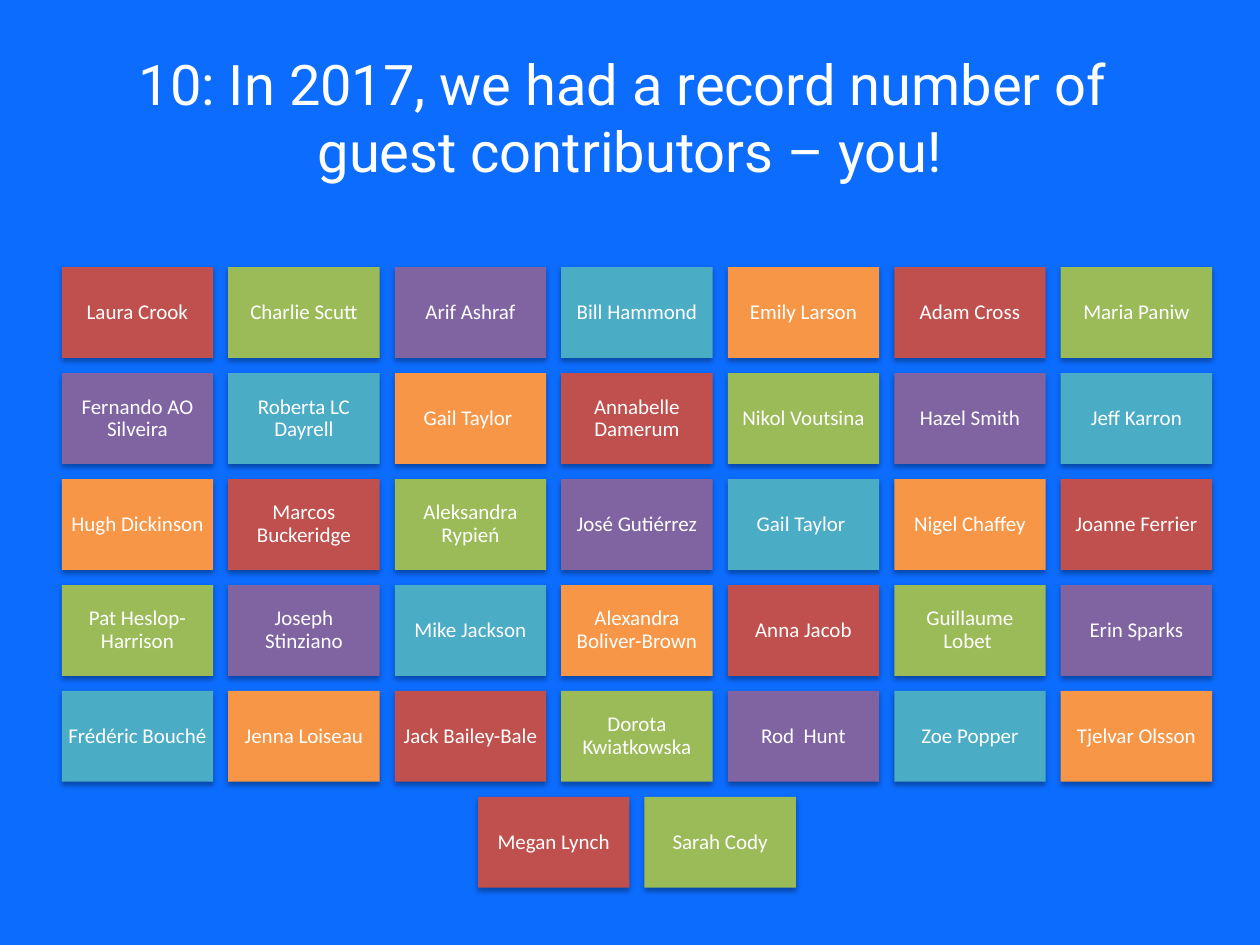
from lxml import etree
from pptx import Presentation
from pptx import util as u
from pptx.dml.color import RGBColor
from pptx.enum import shapes, text
from pptx.oxml import ns

ACCENTS = ["C0504D", "9BBB59", "8064A2", "4BACC6", "F79646"]
CONTRIBUTORS = [
    ["Laura Crook", "Charlie Scutt", "Arif Ashraf", "Bill Hammond",
     "Emily Larson", "Adam Cross", "Maria Paniw"],
    ["Fernando AO Silveira", "Roberta LC Dayrell", "Gail Taylor ", "Annabelle Damerum",
     "Nikol Voutsina", "Hazel Smith", "Jeff Karron"],
    ["Hugh Dickinson", "Marcos Buckeridge", "Aleksandra Rypień", "José Gutiérrez",
     "Gail Taylor ", "Nigel Chaffey", "Joanne Ferrier"],
    ["Pat Heslop-Harrison", "Joseph Stinziano", "Mike Jackson", "Alexandra Boliver-Brown",
     "Anna Jacob", "Guillaume Lobet ", "Erin Sparks"],
    ["Frédéric Bouché", "Jenna Loiseau", "Jack Bailey-Bale", "Dorota Kwiatkowska",
     "Rod  Hunt", "Zoe Popper", "Tjelvar Olsson"],
    ["Megan Lynch", "Sarah Cody"],
]


def paint(color_format, hex_color):
    color_format.rgb = RGBColor.from_string(hex_color)


def write(paragraph, words, font_name, size):
    paragraph.alignment = text.PP_ALIGN.CENTER
    run = paragraph.add_run()
    run.text = words
    run.font.name = font_name
    run.font.size = u.Pt(size)
    paint(run.font.color, "FFFFFF")


deck = Presentation()
deck.slide_width, deck.slide_height = u.Inches(10), u.Inches(7.5)
slide = deck.slides.add_slide(deck.slide_layouts[5])
slide.background.fill.solid()
paint(slide.background.fill.fore_color, "0C6CFE")

headline = slide.shapes.title
headline.left, headline.top = int(deck.slide_width * 0.05), int(deck.slide_height * 0.04)
headline.width, headline.height = int(deck.slide_width * 0.9), int(deck.slide_height / 6)
headline.text_frame.vertical_anchor = text.MSO_ANCHOR.MIDDLE
headline.text_frame.auto_size = text.MSO_AUTO_SIZE.NONE
headline_lines = headline.text_frame.paragraphs[0]
write(headline_lines, "10: In 2017, we had a record number of ", "Roboto", 32)
headline_lines.add_line_break()
write(headline_lines, "guest contributors – you!", "Roboto", 32)

columns = len(CONTRIBUTORS[0])
grid_left, grid_top, grid_width = u.Inches(0.49), u.Inches(2.12), u.Inches(9.13)
card_width = grid_width / (columns + 0.1 * (columns - 1))
card_height = card_width * 0.6
gap = card_width * 0.1

for row, names in enumerate(CONTRIBUTORS):
    indent = (columns - len(names)) / 2
    for column, name in enumerate(names):
        card = slide.shapes.add_shape(
            shapes.MSO_SHAPE.RECTANGLE,
            int(grid_left + (column + indent) * (card_width + gap)),
            int(grid_top + row * (card_height + gap)),
            int(card_width), int(card_height))
        card.fill.solid()
        paint(card.fill.fore_color, ACCENTS[(row * columns + column) % len(ACCENTS)])
        card.line.fill.background()

        card.shadow.inherit = False
        effects = card.element.spPr.find(ns.qn("a:effectLst"))
        shadow = etree.SubElement(
            effects, ns.qn("a:outerShdw"), blurRad=str(u.Pt(3.1)), dist=str(u.Pt(1.8)),
            dir="5400000", rotWithShape="0")
        shade = etree.SubElement(shadow, ns.qn("a:srgbClr"), val="000000")
        etree.SubElement(shade, ns.qn("a:alpha"), val="35000")

        label = card.text_frame
        label.word_wrap = True
        label.vertical_anchor = text.MSO_ANCHOR.MIDDLE
        label.margin_left = label.margin_right = u.Inches(0.05)
        label.margin_top = label.margin_bottom = u.Inches(0.05)
        label.paragraphs[0].line_spacing = 0.9
        write(label.paragraphs[0], name, "Calibri", 12)

deck.save("out.pptx")
